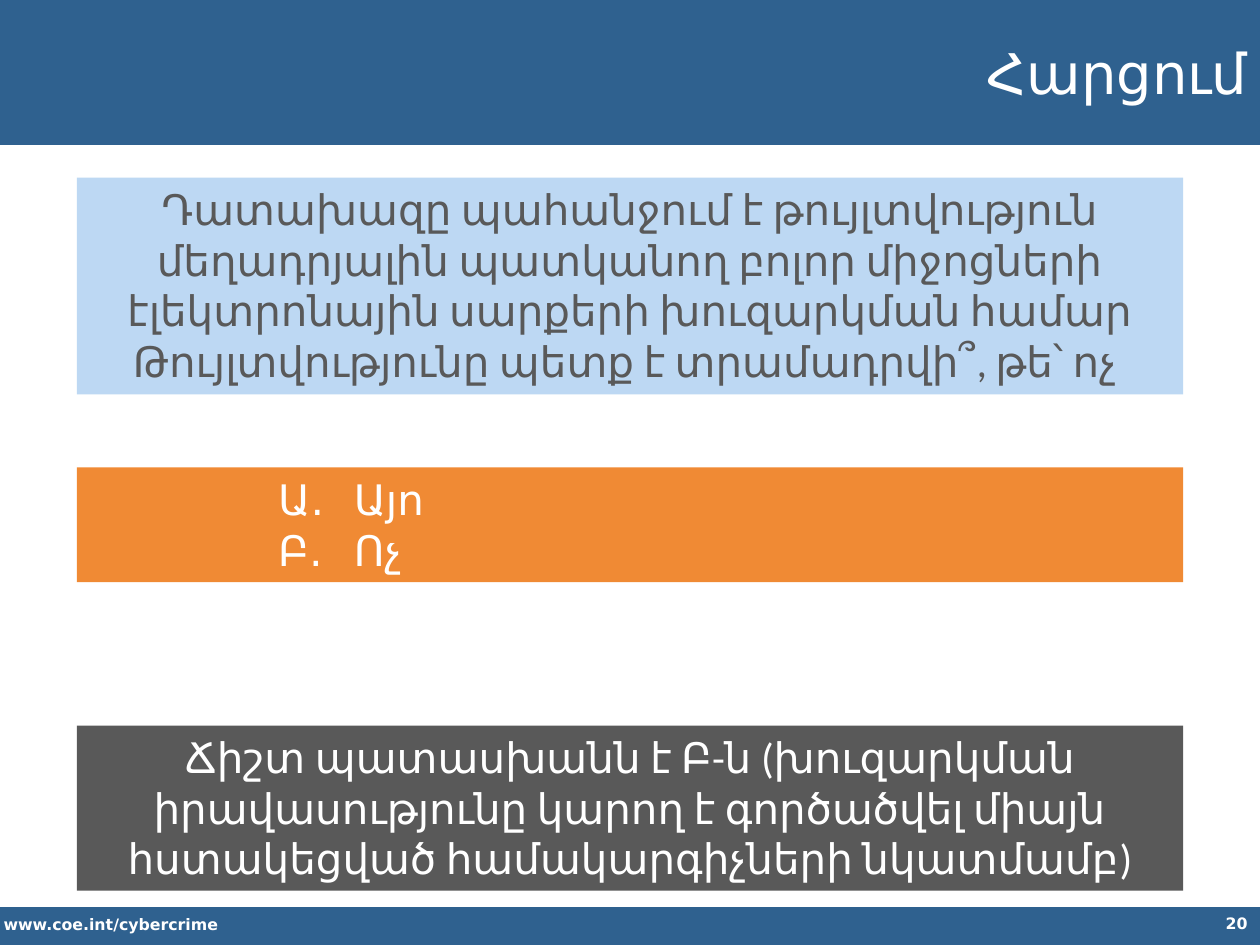
from dataclasses import dataclass

from pptx import Presentation
from pptx.dml.color import RGBColor
from pptx.enum.shapes import MSO_SHAPE
from pptx.enum.text import MSO_ANCHOR, PP_ALIGN
from pptx.util import Inches, Pt

RECT = MSO_SHAPE.RECTANGLE
LEFT, MID, RIGHT = PP_ALIGN.LEFT, PP_ALIGN.CENTER, PP_ALIGN.RIGHT
TOP, CENTER = MSO_ANCHOR.TOP, MSO_ANCHOR.MIDDLE
WIDE, HIGH = Inches(10), Inches(7.5)
COLS, ROWS = 100, 75


@dataclass(frozen=True)
class Theme:
    navy: str = "2F618F"
    sky: str = "BDD8F3"
    orange: str = "F08A34"
    gray: str = "595959"
    white: str = "FFFFFF"
    body: str = "Calibri"
    small: str = "DejaVu Sans"
    title_pt: int = 32
    body_pt: int = 24
    foot_pt: int = 9


THEME = Theme()


@dataclass(frozen=True)
class Box:
    """A block of text placed in grid columns and rows; no fill makes a text box."""
    col: float
    row: float
    wide: float
    high: float
    fill: str | None = None
    lines: tuple[str, ...] = ()
    ink: str = THEME.white
    size: int = THEME.body_pt
    font: str = THEME.body
    bold: bool = False
    align: PP_ALIGN = MID
    anchor: MSO_ANCHOR = TOP
    hang: tuple[float, float] | None = None


def panel(row: float, high: float, fill: str, *lines: str, **look) -> Box:
    """A box in the shared body column."""
    return Box(6.1, row, 87.8, high, fill, lines, **look)


def foot(col: float, row: float, wide: float, high: float, text: str, align: PP_ALIGN) -> Box:
    return Box(col, row, wide, high, None, (text,), size=THEME.foot_pt,
               font=THEME.small, bold=True, align=align)


BOXES = (
    Box(0, -0.3, 100, 11.8, THEME.navy),
    Box(0, 72, 100, 3.2, THEME.navy),
    foot(-0.7, 72.1, 35.2, 2.5, "www.coe.int/cybercrime", LEFT),
    foot(77.5, 72, 22.5, 3.1, "20", RIGHT),
    Box(22, 0.7, 78, 10.1, THEME.navy, ("Հարցում",), size=THEME.title_pt,
        align=RIGHT, anchor=CENTER),
    panel(14.1, 17.2, THEME.sky,
          "Դատախազը պահանջում է թույլտվություն մեղադրյալին պատկանող բոլոր "
          "միջոցների էլեկտրոնային սարքերի խուզարկման համար",
          "Թույլտվությունը պետք է տրամադրվի՞, թե՝ ոչ ", ink=THEME.gray),
    panel(57.6, 13.1, THEME.gray,
          "Ճիշտ պատասխանն է Բ-ն (խուզարկման իրավասությունը կարող է գործածվել "
          "միայն հստակեցված համակարգիչների նկատմամբ)"),
    panel(37.1, 9.1, THEME.orange, "Ա․\tԱյո", "Բ․\tՈչ", align=LEFT, hang=(2.1, 0.6)),
)


def draw(slide, box: Box) -> None:
    area = (int(WIDE * box.col / COLS), int(HIGH * box.row / ROWS),
            int(WIDE * box.wide / COLS), int(HIGH * box.high / ROWS))
    if box.fill:
        shape = slide.shapes.add_shape(RECT, *area)
        shape.shadow.inherit = False
        shape.fill.solid()
        shape.fill.fore_color.rgb = RGBColor.from_string(box.fill)
        shape.line.fill.background()
    else:
        shape = slide.shapes.add_textbox(*area)
    if box.lines:
        write(shape.text_frame, box)


def write(frame, box: Box) -> None:
    frame.word_wrap = True
    frame.vertical_anchor = box.anchor
    frame.text = "\n".join(box.lines)
    for para in frame.paragraphs:
        para.alignment = box.align
        if box.hang:
            left, back = box.hang
            props = para._p.get_or_add_pPr()
            props.set("marL", str(Inches(left)))
            props.set("indent", str(-Inches(back)))
        for run in para.runs:
            font = run.font
            font.name, font.size, font.bold = box.font, Pt(box.size), box.bold
            font.color.rgb = RGBColor.from_string(box.ink)


def main() -> None:
    deck = Presentation()
    deck.slide_width, deck.slide_height = WIDE, HIGH
    slide = deck.slides.add_slide(deck.slide_layouts[6])
    for box in BOXES:
        draw(slide, box)
    deck.save("out.pptx")


if __name__ == "__main__":
    main()
